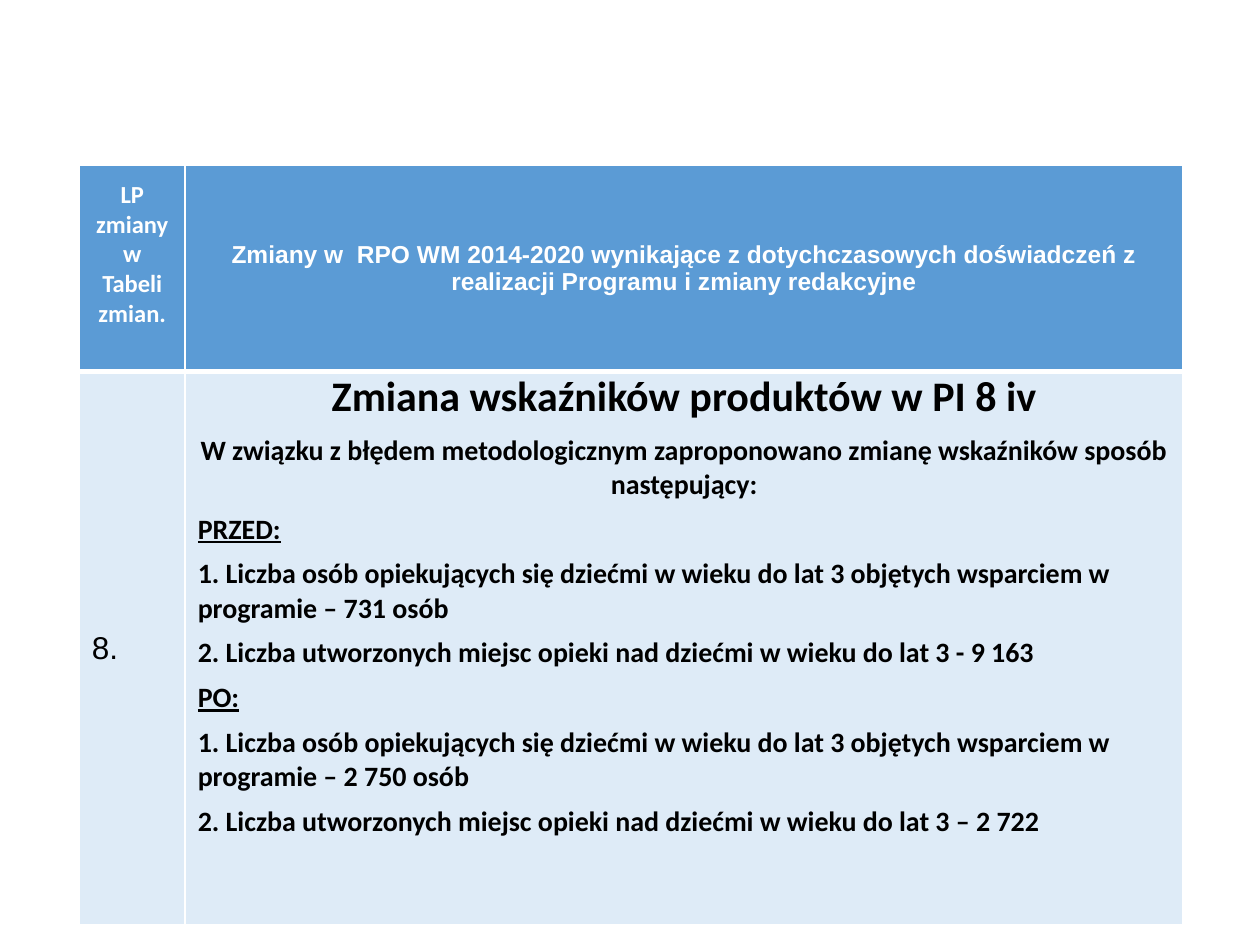
from dataclasses import dataclass

from lxml import etree
from pptx import Presentation
from pptx.dml.color import RGBColor
from pptx.enum.text import MSO_ANCHOR, PP_ALIGN
from pptx.oxml.ns import qn
from pptx.util import Inches, Pt

MID, TOP = MSO_ANCHOR.MIDDLE, MSO_ANCHOR.TOP
LEFT, CENTER = PP_ALIGN.LEFT, PP_ALIGN.CENTER


@dataclass(frozen=True)
class Theme:
    """Colours, fonts and type sizes of the slide."""
    white: str = "FFFFFF"
    black: str = "000000"
    head: str = "5B9BD5"
    body: str = "DEEBF7"
    sans: str = "Calibri"
    plain: str = "Arial"
    small: int = 14
    text: int = 16
    mark: int = 18
    title: int = 24
    gap: int = 6
    thin: int = 1
    thick: int = 3


THEME = Theme()

TITLE = "Zmiana wskaźników produktów w PI 8 iv"
INTRO = ("W związku z błędem metodologicznym zaproponowano "
         "zmianę wskaźników sposób następujący:")
CARE = ("1. Liczba osób opiekujących się dziećmi w wieku do lat 3 "
        "objętych wsparciem w programie – {} osób")
PLACES = "2. Liczba utworzonych miejsc opieki nad dziećmi w wieku do lat 3 {}"
STAGES = [("PRZED:", "731", "- 9 163"), ("PO:", "2 750", "– 2 722")]


def frame(cell, fill, base):
    """Give a cell its white borders and its fill."""
    props = cell._tc.get_or_add_tcPr()
    widths = {"L": THEME.thin, "R": THEME.thin, "T": THEME.thin, "B": base}
    for side, width in widths.items():
        line = etree.SubElement(props, qn(f"a:ln{side}"), w=str(Pt(width)))
        solid = etree.SubElement(line, qn("a:solidFill"))
        etree.SubElement(solid, qn("a:srgbClr"), val=THEME.white)
    cell.fill.solid()
    cell.fill.fore_color.rgb = RGBColor.from_string(fill)


def style(para, size, font, color, align=LEFT, bold=True, line=False):
    """Format a paragraph and its runs."""
    para.alignment = align
    for run in para.runs:
        run.font.size = Pt(size)
        run.font.name = font
        run.font.bold = bold
        run.font.underline = line
        run.font.color.rgb = RGBColor.from_string(color)


def add_head(cells):
    """Fill the header row."""
    items = [
        ("LP zmiany w Tabeli zmian.", THEME.sans),
        ("Zmiany w  RPO WM 2014-2020 wynikające z dotychczasowych "
         "doświadczeń z realizacji Programu i zmiany redakcyjne", THEME.plain),
    ]
    for cell, (text, font) in zip(cells, items):
        frame(cell, THEME.head, THEME.thick)
        cell.vertical_anchor = MID
        cell.text_frame.text = text
        style(cell.text_frame.paragraphs[0], THEME.small, font,
              THEME.white, CENTER)
    cells[0].margin_bottom = Inches(0.27)


def add_mark(cell):
    """Fill the number cell."""
    frame(cell, THEME.body, THEME.thin)
    cell.vertical_anchor = MID
    cell.text_frame.text = "8."
    style(cell.text_frame.paragraphs[0], THEME.mark, THEME.plain,
          THEME.black, bold=False)


def add_body(cell):
    """Fill the cell that describes the change."""
    frame(cell, THEME.body, THEME.thin)
    cell.vertical_anchor = TOP
    cell.margin_top = cell.margin_bottom = Inches(0)
    rows = [(TITLE, THEME.title, CENTER, False),
            (INTRO, THEME.text, CENTER, False)]
    for label, care, places in STAGES:
        rows += [(label, THEME.text, LEFT, True),
                 (CARE.format(care), THEME.text, LEFT, False),
                 (PLACES.format(places), THEME.text, LEFT, False)]
    cell.text_frame.text = "\n".join(row[0] for row in rows)
    for para, (_, size, align, line) in zip(cell.text_frame.paragraphs, rows):
        para.space_after = Pt(THEME.gap)
        style(para, size, THEME.sans, THEME.black, align, line=line)


def add_grid(slide, left, top, width, height):
    """Place the table of changes in the given box."""
    side, head = Inches(0.84), Inches(1.64)
    grid = slide.shapes.add_table(2, 2, left, top, width, height).table
    grid.columns[0].width, grid.columns[1].width = side, width - side
    grid.rows[0].height, grid.rows[1].height = head, height - head
    grid.horz_banding = False
    add_head([grid.cell(0, col) for col in range(2)])
    add_mark(grid.cell(1, 0))
    add_body(grid.cell(1, 1))


def main():
    """Build and save the slide."""
    deck = Presentation()
    deck.slide_width, deck.slide_height = Inches(10), Inches(7.5)
    slide = deck.slides.add_slide(deck.slide_layouts[6])
    add_grid(slide, Inches(0.63), Inches(1.31), Inches(8.76), Inches(6.03))
    deck.save("out.pptx")


if __name__ == "__main__":
    main()
